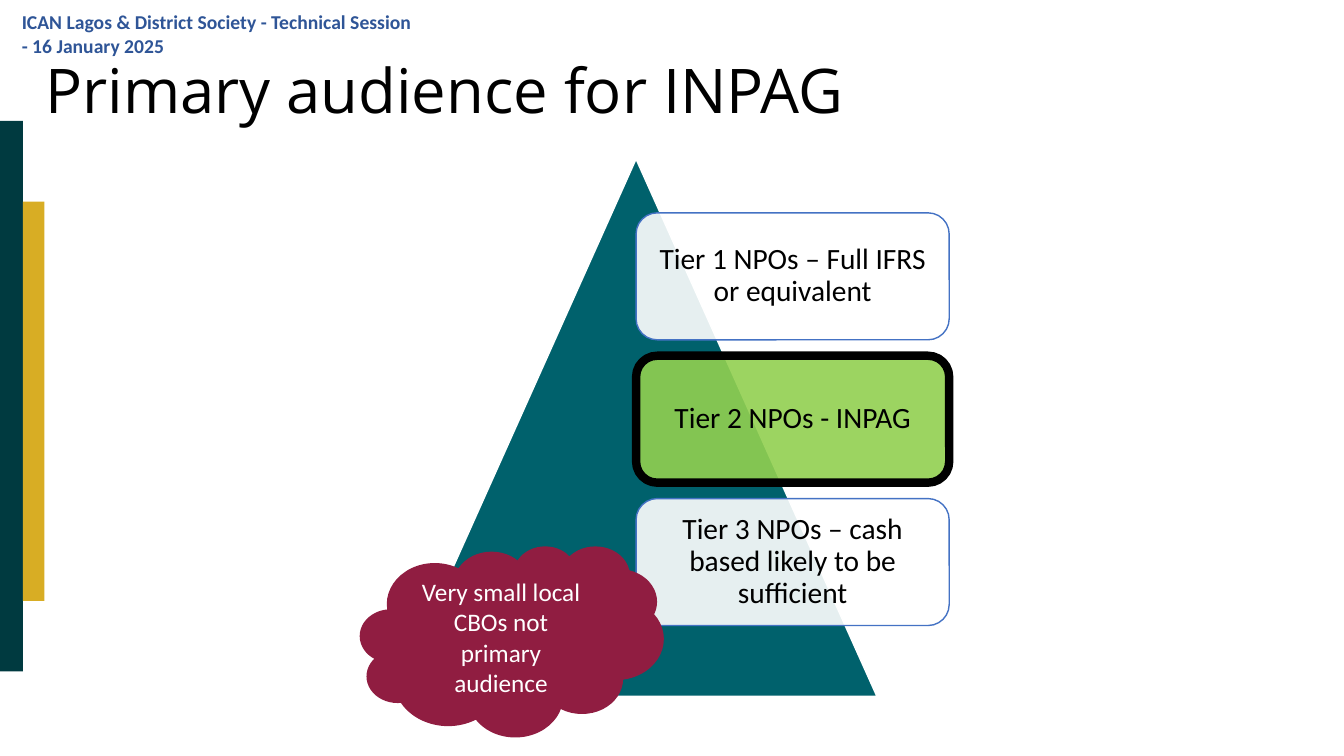
from dataclasses import dataclass

from lxml.etree import SubElement
from pptx import Presentation
from pptx.dml.color import RGBColor as Rgb
from pptx.enum.shapes import MSO_SHAPE as Kind
from pptx.enum.text import MSO_ANCHOR as Anchor, PP_ALIGN as Align
from pptx.oxml.ns import qn
from pptx.util import Cm, Pt


@dataclass(frozen=True)
class Theme:
    dark: str = "003A40"
    gold: str = "D8AD24"
    teal: str = "00616C"
    wine: str = "901D41"
    green: str = "92D050"
    blue: str = "4472C4"
    navy: str = "2F5597"
    white: str = "FFFFFF"
    black: str = "000000"
    head: str = "Open Sans"
    body: str = "Calibri"
    title: int = 44
    card: int = 21
    note: int = 18
    event: int = 14


T = Theme()


def place(shape, box):
    shape.left, shape.top, shape.width, shape.height = map(Cm, box)


def draw(slide, kind, box, fill, line=None, width=1, alpha=None):
    """Add a flat preset shape; alpha is opacity in percent."""
    shape = slide.shapes.add_shape(kind, *map(Cm, box))
    shape.shadow.inherit = False
    shape.fill.solid()
    shape.fill.fore_color.rgb = Rgb.from_string(fill)
    if alpha:
        color = shape.fill._xPr.find(qn("a:solidFill"))[0]
        SubElement(color, qn("a:alpha")).set("val", str(alpha * 1000))
    if line:
        shape.line.color.rgb = Rgb.from_string(line)
        shape.line.width = Pt(width)
    else:
        shape.line.fill.background()
    return shape


def write(shape, text, size, color, font=T.body, bold=False,
          align=Align.CENTER, anchor=Anchor.MIDDLE, space=1.0):
    frame = shape.text_frame
    frame.word_wrap = True
    frame.vertical_anchor = anchor
    para = frame.paragraphs[0]
    para.alignment = align
    para.line_spacing = space
    run = para.add_run()
    run.text = text
    run.font.name = font
    run.font.size = Pt(size)
    run.font.bold = bold
    run.font.color.rgb = Rgb.from_string(color)


def side(slide, box):
    """Two bars on the left edge, the second one shorter."""
    x, y, w, h = box
    draw(slide, Kind.RECTANGLE, (x, y, 0.58, h), T.dark)
    draw(slide, Kind.RECTANGLE, (x + 0.58, y + 2.03, w - 0.58, 10.06), T.gold)


def event(slide, box):
    label = slide.shapes.add_textbox(*map(Cm, box))
    write(label, "ICAN Lagos & District Society - Technical Session - 16 January 2025",
          T.event, T.navy, bold=True, align=Align.LEFT, anchor=Anchor.TOP)


def title(slide, box):
    head = slide.shapes.title
    place(head, box)
    write(head, "Primary audience for INPAG", T.title, T.black, T.head,
          align=Align.LEFT, space=0.9)


def tiers(slide, box):
    """Triangle with cards stacked from its middle line."""
    x, y, w, h = box
    draw(slide, Kind.ISOSCELES_TRIANGLE, box, T.teal, T.white)
    cards = (
        ("Tier 1 NPOs – Full IFRS or equivalent", T.white, T.blue, 1),
        ("Tier 2 NPOs - INPAG", T.green, T.black, 6),
        ("Tier 3 NPOs – cash based likely to be sufficient", T.white, T.blue, 1),
    )
    tall = 3.2
    step = tall * 9 / 8
    for i, (text, fill, line, width) in enumerate(cards):
        spot = (x + w / 2, y + h / 10 + i * step, w * 0.65, tall)
        card = draw(slide, Kind.ROUNDED_RECTANGLE, spot, fill, line, width, 90)
        frame = card.text_frame
        frame.margin_left = frame.margin_right = Cm(0.23)
        frame.margin_top = frame.margin_bottom = Cm(0.23)
        write(card, text, T.card, T.black, space=0.9)


def cloud(slide, box):
    puff = draw(slide, Kind.CLOUD, box, T.wine, T.wine)
    write(puff, "Very small local CBOs not primary audience", T.note, T.white)


def main():
    deck = Presentation()
    deck.slide_width, deck.slide_height = Cm(33.87), Cm(19.05)
    slide = deck.slides.add_slide(deck.slide_layouts[5])
    side(slide, (0, 3.05, 1.12, 13.87))
    event(slide, (0.3, 0.13, 10.41, 1.02))
    title(slide, (0.89, 0.51, 29.21, 3.68))
    tiers(slide, (9.96, 4.01, 12.14, 13.54))
    cloud(slide, (9.09, 13.77, 7.62, 4.78))
    deck.save("out.pptx")


if __name__ == "__main__":
    main()
